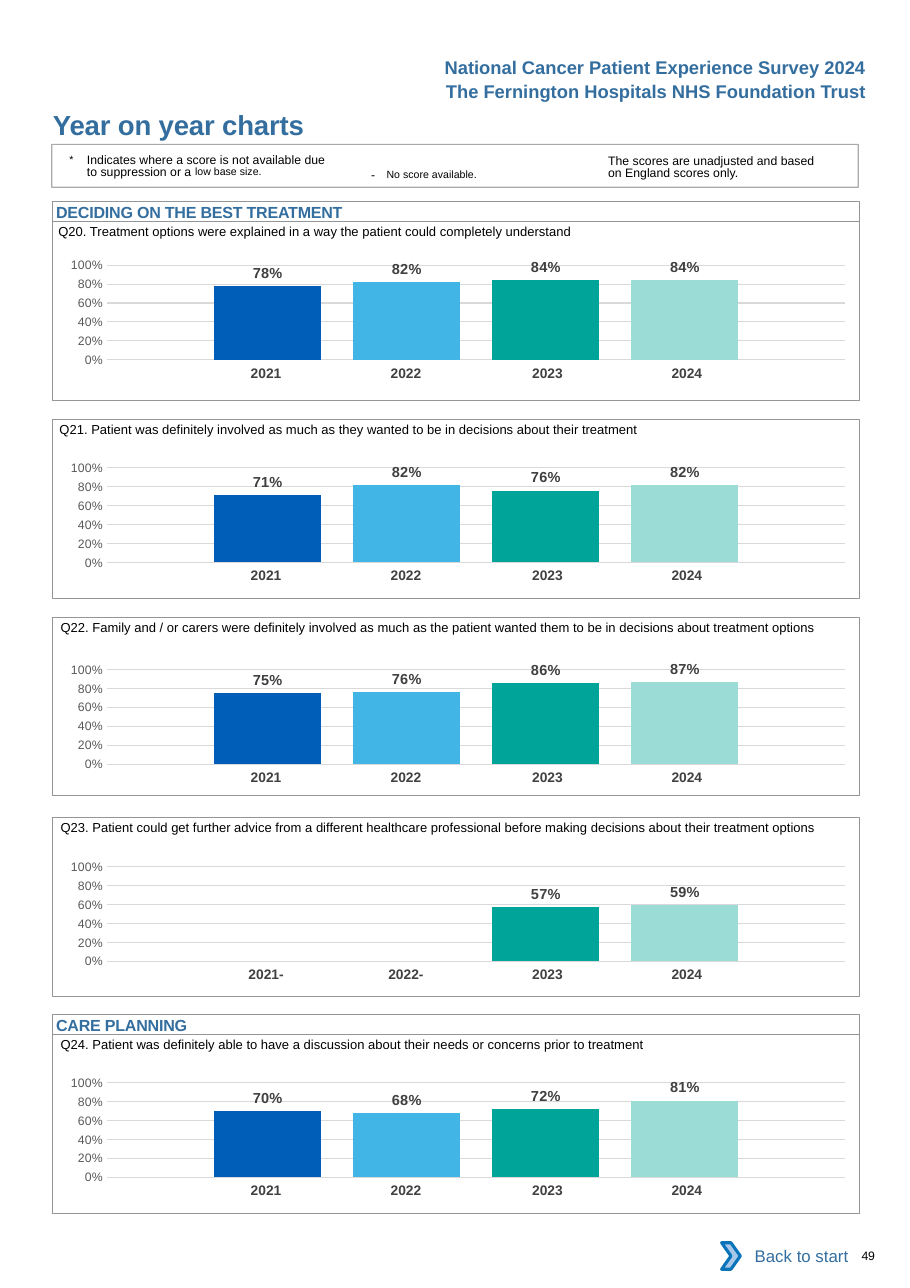
from lxml.etree import SubElement
from pptx import Presentation
from pptx.chart.data import CategoryChartData
from pptx.dml.color import RGBColor
from pptx.enum.chart import XL_CHART_TYPE as ChartType, XL_LABEL_POSITION as LabelPosition
from pptx.enum.chart import XL_TICK_MARK as TickMark
from pptx.enum.shapes import MSO_SHAPE as Preset
from pptx.enum.text import MSO_ANCHOR as Anchor, MSO_AUTO_SIZE as AutoSize, PP_ALIGN as Align
from pptx.oxml import parse_xml
from pptx.oxml.ns import nsdecls, qn
from pptx.util import Inches, Pt

BLUE = RGBColor(0x33, 0x6E, 0x9F)
BLACK = RGBColor(0x00, 0x00, 0x00)
WHITE = RGBColor(0xFF, 0xFF, 0xFF)
BORDER = RGBColor(0x93, 0x95, 0x98)
YEAR_GREY = RGBColor(0x41, 0x40, 0x42)
LABEL_GREY = RGBColor(0x40, 0x40, 0x40)
AXIS_GREY = RGBColor(0x59, 0x59, 0x59)
GRID_GREY = RGBColor(0xD9, 0xD9, 0xD9)
CHEVRON_FILL = RGBColor(0xA8, 0xC7, 0xE9)
CHEVRON_LINE = RGBColor(0x0A, 0x74, 0xBB)
BAR_COLOURS = [RGBColor(0x00, 0x5E, 0xB8), RGBColor(0x41, 0xB6, 0xE6),
               RGBColor(0x00, 0xA4, 0x99), RGBColor(0x9C, 0xDC, 0xD7)]

LEFT, WIDTH, BOX_HEIGHT, BAR_HEIGHT = 0.48, 7.32, 1.62, 0.18
YEAR_WIDTHS = [1.27, 1.27, 1.34, 1.27]
YEAR_RIGHT_MARGINS = [0, 0, 0.04, 0.12]
PLOT_LAYOUT = {"x": 0.08, "y": 0.145, "w": 0.915, "h": 0.666}

# Question, text left, box top, chart top, scores for 2021 to 2024
QUESTIONS = [
    ("Q20. Treatment options were explained in a way the patient could completely understand",
     0.53, 2.01, 2.22, [0.78, 0.82, 0.84, 0.84]),
    ("Q21. Patient was definitely involved as much as they wanted to be in decisions "
     "about their treatment",
     0.54, 3.81, 4.06, [0.71, 0.82, 0.76, 0.82]),
    ("Q22. Family and / or carers were definitely involved as much as the patient wanted them "
     "to be in decisions about treatment options",
     0.55, 5.6, 5.89, [0.75, 0.76, 0.86, 0.87]),
    ("Q23. Patient could get further advice from a different healthcare professional before "
     "making decisions about their treatment options",
     0.55, 7.42, 7.68, [None, None, 0.57, 0.59]),
    ("Q24. Patient was definitely able to have a discussion about their needs or concerns "
     "prior to treatment",
     0.55, 9.39, 9.64, [0.7, 0.68, 0.72, 0.81]),
]
SECTIONS = [("DECIDING ON THE BEST TREATMENT", 1.83), ("CARE PLANNING", 9.21)]


def set_values(target, values):
    for name, value in values.items():
        setattr(target, name, value)


class SurveyPage:
    def __init__(self, deck):
        self.page = deck.slides.add_slide(deck.slide_layouts[5])
        self.shapes = self.page.shapes

    def style_font(self, font, size, colour, bold=False):
        set_values(font, {"name": "Arial", "size": Pt(size), "bold": bold})
        font.color.rgb = colour

    def fill_text(self, shape, spans, size, colour=BLACK, bold=False, margins=(0, 0, 0, 0),
                  align=Align.LEFT, anchor=Anchor.TOP, wrap=True, spacing=None, hanging=0):
        """Each span is a text and a dict of run attributes that may include a size."""
        frame = shape.text_frame
        sides = ("margin_left", "margin_top", "margin_right", "margin_bottom")
        set_values(frame, dict(zip(sides, map(Inches, margins))))
        set_values(frame, {"word_wrap": wrap, "vertical_anchor": anchor,
                           "auto_size": AutoSize.NONE})
        para = frame.paragraphs[0]
        set_values(para, {"alignment": align, "line_spacing": spacing})
        if hanging:
            properties = para._p.get_or_add_pPr()
            properties.set("marL", str(Inches(hanging)))
            properties.set("indent", str(-Inches(hanging)))
        for text, extras in spans:
            span = para.add_run()
            span.text = text
            self.style_font(span.font, extras.get("size", size), colour, bold)
            for name in ("spc", "baseline"):
                if name in extras:
                    span.font._element.set(name, str(extras[name]))

    def title(self, text, place, **style):
        shape = self.shapes.title
        set_values(shape, dict(zip(("left", "top", "width", "height"), map(Inches, place))))
        self.fill_text(shape, [(text, {"spc": -10})], **style)

    def text(self, spans, place, **style):
        self.fill_text(self.shapes.add_textbox(*map(Inches, place)), spans, **style)

    def shape(self, place, preset=Preset.RECTANGLE, fill=None, line=BORDER, weight=0.5):
        shape = self.shapes.add_shape(preset, *map(Inches, place))
        shape.shadow.inherit = False
        if fill is None:
            shape.fill.background()
        else:
            shape.fill.solid()
            shape.fill.fore_color.rgb = fill
        if line is None:
            shape.line.fill.background()
        else:
            shape.line.color.rgb = line
            shape.line.width = Pt(weight)
        return shape

    def years(self, top, scores):
        place = map(Inches, (1.73, top, sum(YEAR_WIDTHS), 0.27))
        table = self.shapes.add_table(1, len(scores), *place).table
        set_values(table, {"first_row": False, "horz_banding": False})
        for index, score in enumerate(scores):
            table.columns[index].width = Inches(YEAR_WIDTHS[index])
            cell = table.cell(0, index)
            cell.fill.background()
            set_values(cell, {"margin_left": Inches(0.1), "margin_top": Inches(0.05),
                              "margin_right": Inches(YEAR_RIGHT_MARGINS[index]),
                              "margin_bottom": Inches(0.05)})
            para = cell.text_frame.paragraphs[0]
            para.alignment = Align.CENTER
            span = para.add_run()
            span.text = f"{2021 + index}" + ("-" if score is None else "")
            self.style_font(span.font, 9, YEAR_GREY, True)

    def chart(self, top, scores):
        data = CategoryChartData(number_format="0%")
        data.categories = ["1"]
        for number, score in enumerate(scores, 1):
            data.add_series(f"Series {number}", [score])
        place = map(Inches, (0.39, top, WIDTH, 1.29))
        chart = self.shapes.add_chart(ChartType.COLUMN_CLUSTERED, *place, data).chart
        set_values(chart, {"has_legend": False, "has_title": False})
        set_values(chart.font, {"name": "Calibri", "size": Pt(10)})
        chart.font.color.rgb = BLACK

        # Axes
        chart.category_axis.visible = False
        axis = chart.value_axis
        set_values(axis, {"minimum_scale": 0, "maximum_scale": 1, "major_unit": 0.2,
                          "major_tick_mark": TickMark.NONE, "minor_tick_mark": TickMark.NONE,
                          "has_major_gridlines": True})
        set_values(axis.tick_labels, {"number_format": "0%", "number_format_is_linked": False})
        self.style_font(axis.tick_labels.font, 8, AXIS_GREY)
        axis.format.line.fill.background()
        grid = axis.major_gridlines.format.line
        grid.color.rgb = GRID_GREY
        grid.width = Pt(0.75)

        # Bars and their labels
        plot = chart.plots[0]
        set_values(plot, {"gap_width": 200, "overlap": -30, "vary_by_categories": False})
        for series, colour in zip(plot.series, BAR_COLOURS):
            series.invert_if_negative = False
            series.format.fill.solid()
            series.format.fill.fore_color.rgb = colour
            labels = series.data_labels
            set_values(labels, {"show_value": True, "position": LabelPosition.OUTSIDE_END,
                                "number_format": "0%", "number_format_is_linked": False})
            self.style_font(labels.font, 9.5, LABEL_GREY, True)

        # Fixed plot area on a clear background
        body = chart.element.find(qn("c:chart"))
        body.addnext(parse_xml(f'<c:spPr {nsdecls("c", "a")}><a:noFill/>'
                               '<a:ln><a:noFill/></a:ln></c:spPr>'))
        area = body.find(qn("c:plotArea"))
        for layout in area.findall(qn("c:layout")):
            area.remove(layout)
        layout = parse_xml(f'<c:layout {nsdecls("c")}><c:manualLayout/></c:layout>')
        settings = {"layoutTarget": "inner", "xMode": "edge", "yMode": "edge", **PLOT_LAYOUT}
        for name, value in settings.items():
            SubElement(layout[0], qn(f"c:{name}")).set("val", str(value))
        area.insert(0, layout)


def main():
    deck = Presentation()
    set_values(deck, {"slide_width": Inches(8.26), "slide_height": Inches(11.69)})
    survey = SurveyPage(deck)

    # Heading
    heading = {"size": 12, "colour": BLUE, "bold": True, "align": Align.RIGHT,
               "margins": (0.1, 0.05, 0.1, 0.05), "wrap": False}
    survey.text([("National Cancer Patient Experience Survey 2024", {})],
                (3.92, 0.46, 4.04, 0.3), **heading)
    survey.text([("The Fernington Hospitals NHS Foundation Trust", {})],
                (3.94, 0.68, 4.02, 0.3), **heading)
    survey.title("Year on year charts", (0.47, 0.96, 4.5, 0.3), size=18, colour=BLUE,
                 bold=True, margins=(0.01, 0.02, 0, 0))

    # Key to the scores
    key = survey.shape((0.47, 1.31, WIDTH, 0.39), weight=0.75)
    line_colour = key.line._ln.find(".//" + qn("a:srgbClr"))
    SubElement(line_colour, qn("a:alpha")).set("val", "80000")
    note = {"size": 8, "margins": (0, 0.03, 0, 0), "spacing": Pt(8.1)}
    survey.text([("*\t", {"size": 12, "baseline": 3000}),
                 ("Indicates where a score is not available due to suppression or a ", {}),
                 ("low base size.", {"size": 12, "baseline": 7000})],
                (0.63, 1.38, 2.4, 0.27), hanging=0.16, **note)
    survey.text([("- ", {"spc": 260}), ("No score available.", {"size": 12, "baseline": 3000})],
                (3.27, 1.41, 1.83, 0.24), size=8, margins=(0.1, 0.05, 0.1, 0.05))
    survey.text([("The scores are unadjusted and based on England scores only.", {})],
                (5.52, 1.38, 1.95, 0.27), **note)

    # Questions with their charts
    for question, left, top, chart_top, scores in QUESTIONS:
        survey.years(chart_top + 1.05, scores)
        survey.chart(chart_top, scores)
        survey.shape((LEFT, top, WIDTH, BOX_HEIGHT))
        survey.text([(question, {})], (left, top - 0.07, 7.24, 0.24), size=8.5,
                    margins=(0, 0.09, 0, 0))

    # Section bars
    for section, top in SECTIONS:
        bar = survey.shape((LEFT, top, WIDTH, BAR_HEIGHT))
        survey.fill_text(bar, [(section, {"spc": -10})], size=10.5, colour=BLUE, bold=True,
                         margins=(0.03, 0.01, 0, 0))

    # Footer
    back = survey.shape((6.62, 11.19, 1.18, 0.42), fill=WHITE, line=None)
    survey.fill_text(back, [("Back to start", {})], size=11, colour=BLUE, align=Align.RIGHT,
                     anchor=Anchor.MIDDLE, margins=(0.1, 0.05, 0.1, 0.05))
    survey.shape((6.55, 11.28, 0.17, 0.24), Preset.CHEVRON, CHEVRON_FILL, CHEVRON_LINE, 2)
    survey.text([("49", {"spc": -20})], (7.82, 11.33, 0.41, 0.13), size=8)

    deck.save("out.pptx")


if __name__ == "__main__":
    main()
